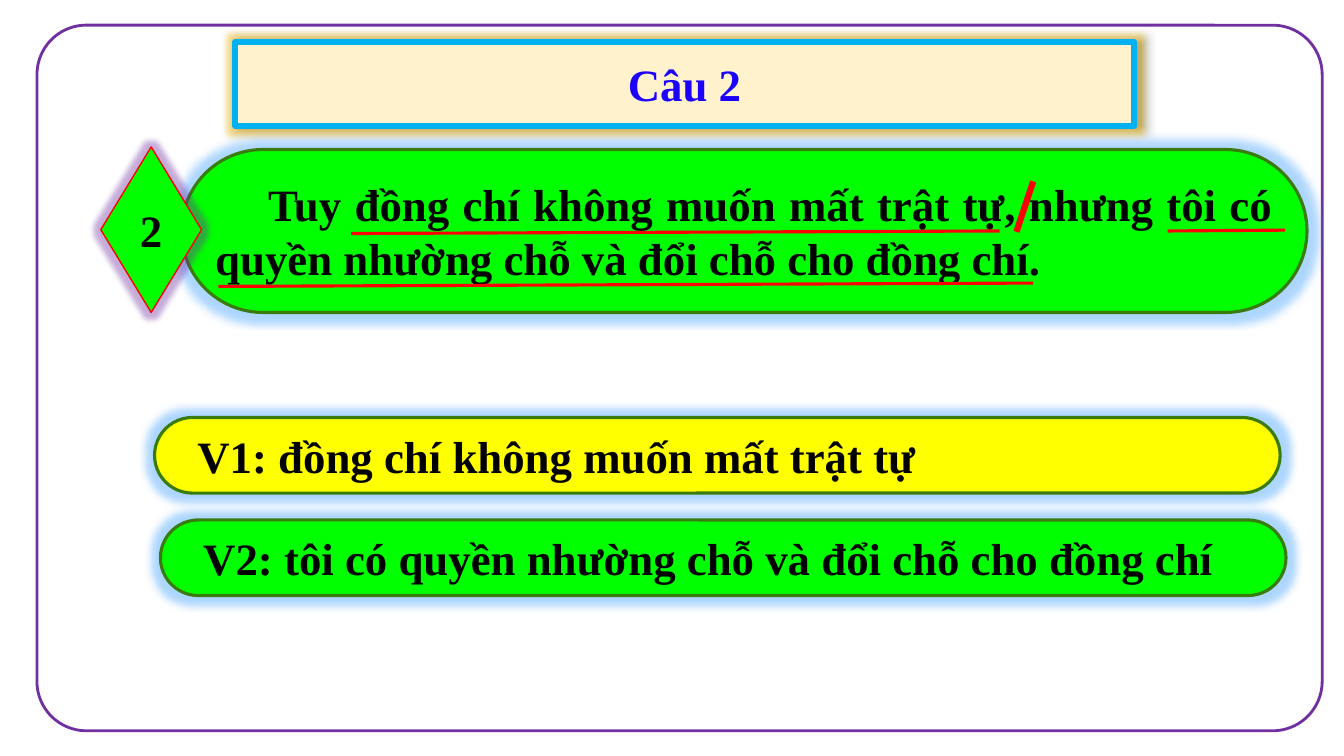
from dataclasses import dataclass

from lxml import etree
from pptx import Presentation
from pptx.dml.color import RGBColor
from pptx.enum.shapes import MSO_CONNECTOR, MSO_SHAPE
from pptx.enum.text import MSO_ANCHOR, PP_ALIGN
from pptx.oxml import parse_xml
from pptx.oxml.ns import nsdecls, qn
from pptx.util import Inches, Pt

ROUNDED = MSO_SHAPE.ROUNDED_RECTANGLE
DIAMOND = MSO_SHAPE.DIAMOND
STRAIGHT = MSO_CONNECTOR.STRAIGHT
MIDDLE = MSO_ANCHOR.MIDDLE
CENTER, JUSTIFY = PP_ALIGN.CENTER, PP_ALIGN.JUSTIFY


@dataclass(frozen=True)
class Theme:
    font: str = "Times New Roman"
    size: int = 32
    title: str = "1B00FE"
    text: str = "000000"
    cream: str = "FFF2CC"
    sky: str = "00B0F0"
    purple: str = "7030A0"
    green: str = "00FF00"
    yellow: str = "FFFF00"
    edge: str = "397B0D"
    red: str = "FF0000"
    gold_glow: str = "FFC000"
    blue_glow: str = "3399FF"


theme = Theme()

# Slide with a grid of 16 columns and 9 rows
deck = Presentation()
deck.slide_width, deck.slide_height = Inches(13.33), Inches(7.5)
COLUMN, ROW = deck.slide_width / 16, deck.slide_height / 9
page = deck.slides.add_slide(deck.slide_layouts[5])


def style(shape, fill, edge, weight, glow=None, radius=0):
    """Set fill, outline and an optional glow."""
    if fill:
        shape.fill.solid()
        shape.fill.fore_color.rgb = RGBColor.from_string(fill)
    else:
        shape.fill.background()
    shape.line.color.rgb = RGBColor.from_string(edge)
    shape.line.width = Pt(weight)
    shape.shadow.inherit = False
    if glow:
        effects = shape._element.spPr.find(qn("a:effectLst"))
        effects.append(parse_xml(
            f'<a:glow {nsdecls("a")} rad="{Pt(radius)}"><a:srgbClr val="{glow}">'
            '<a:alpha val="40000"/></a:srgbClr></a:glow>'))


def write(shape, text, color, align, margin=0, first_line=0):
    """Write one bold paragraph, with its indents in columns."""
    frame = shape.text_frame
    frame.text = text
    frame.word_wrap = True
    frame.vertical_anchor = MIDDLE
    para = frame.paragraphs[0]
    para.alignment = align
    properties = para._p.get_or_add_pPr()
    properties.set("marL", str(round(margin * COLUMN)))
    properties.set("indent", str(round(first_line * COLUMN)))
    span = para.runs[0]
    span.font.name = theme.font
    span.font.size = Pt(theme.size)
    span.font.bold = True
    span.font.color.rgb = RGBColor.from_string(color)


# Title pill
title = page.shapes.title
title.left, title.top = round(2.8 * COLUMN), round(0.5 * ROW)
title.width, title.height = round(10.7 * COLUMN), round(ROW)
title._element.spPr.append(parse_xml(
    f'<a:prstGeom {nsdecls("a")} prst="roundRect"><a:avLst>'
    '<a:gd name="adj" fmla="val 50000"/></a:avLst></a:prstGeom>'))
style(title, theme.cream, theme.sky, 4.5, theme.gold_glow, 8)
title._element.spPr.find(qn("a:effectLst")).append(parse_xml(
    f'<a:outerShdw {nsdecls("a")} blurRad="{Pt(4)}" dist="{Pt(3)}" dir="0">'
    '<a:srgbClr val="000000"><a:alpha val="40000"/></a:srgbClr></a:outerShdw>'))
write(title, "Câu 2", theme.title, CENTER)

# Frame, question, number and answers: kind, corner, place on the grid, look, text
parts = [
    (ROUNDED, 0.07, (0.44, 0.3, 15.3, 8.4),
     (None, theme.purple, 2), None),
    (ROUNDED, 0.5, (2.16, 1.78, 13.4, 1.94),
     (theme.green, theme.edge, 2.25, theme.blue_glow, 11),
     ("Tuy đồng chí không muốn mất trật tự, nhưng tôi có quyền nhường chỗ "
      "và đổi chỗ cho đồng chí.", theme.text, JUSTIFY, 0, 0.63)),
    (DIAMOND, None, (1.2, 1.75, 1.2, 1.97),
     (theme.green, theme.red, 1, theme.purple, 8),
     ("2", theme.text, CENTER)),
    (ROUNDED, 0.5, (1.84, 4.97, 13.4, 0.9),
     (theme.yellow, theme.edge, 2.25, theme.blue_glow, 11),
     ("V1: đồng chí không muốn mất trật tự", theme.text, JUSTIFY, 0.26)),
    (ROUNDED, 0.5, (1.91, 6.19, 13.4, 0.9),
     (theme.green, theme.edge, 2.25, theme.blue_glow, 11),
     ("V2: tôi có quyền nhường chỗ và đổi chỗ cho đồng chí",
      theme.text, JUSTIFY, 0.26)),
]
for kind, corner, (left, top, width, height), look, words in parts:
    shape = page.shapes.add_shape(
        kind, round(left * COLUMN), round(top * ROW),
        round(width * COLUMN), round(height * ROW))
    if corner:
        shape.adjustments[0] = corner
    style(shape, *look)
    if words:
        write(shape, *words)

# Clause break and underlines: start, end, weight
marks = [
    ((12.3, 2.16), (12.1, 2.76), 4.5),
    ((4.18, 2.78), (11.9, 2.75), 2.25),
    ((2.6, 3.41), (12.3, 3.37), 2.25),
    ((13.9, 2.75), (15.3, 2.74), 2.25),
]
for start, end, weight in marks:
    mark = page.shapes.add_connector(
        STRAIGHT, round(start[0] * COLUMN), round(start[1] * ROW),
        round(end[0] * COLUMN), round(end[1] * ROW))
    mark.line.color.rgb = RGBColor.from_string(theme.red)
    mark.line.width = Pt(weight)
    etree.SubElement(mark._element.spPr, qn("a:effectLst"))

deck.save("out.pptx")
